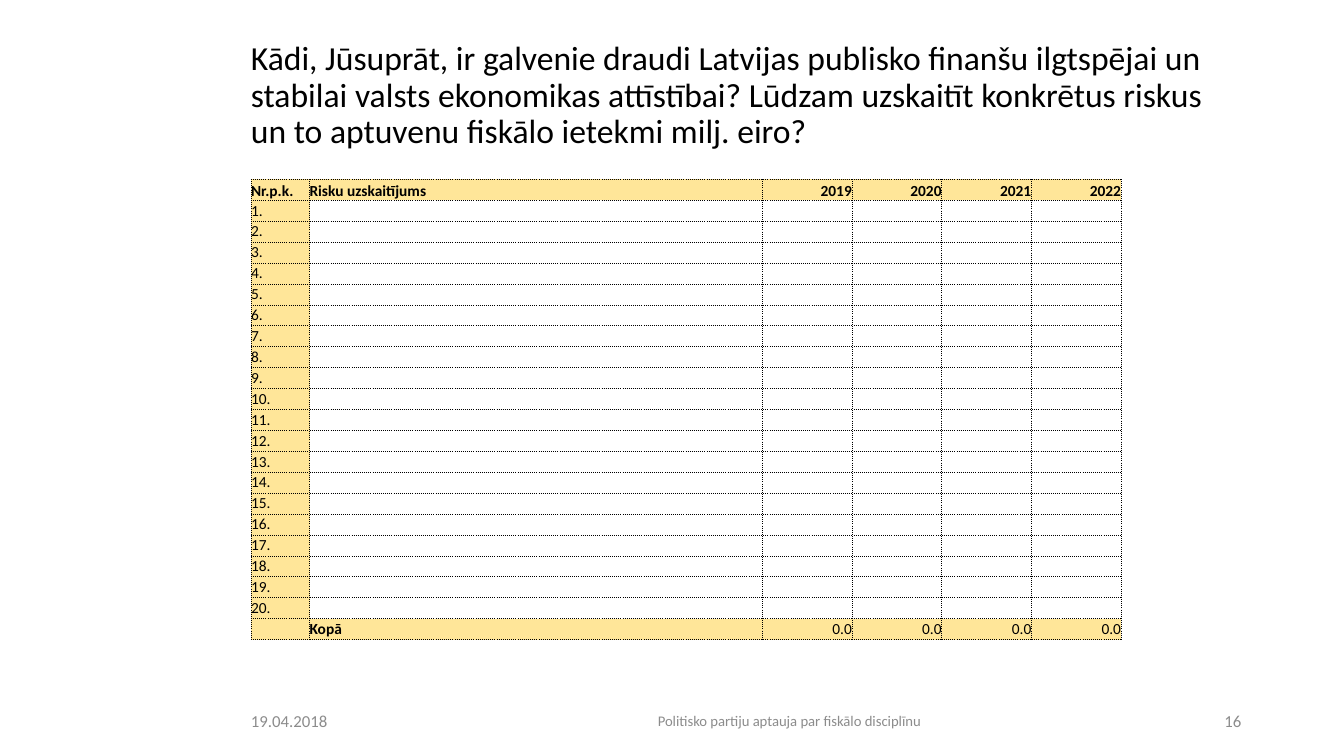
from lxml.etree import SubElement
from pptx import Presentation
from pptx.dml.color import RGBColor
from pptx.enum.text import MSO_ANCHOR, PP_ALIGN
from pptx.oxml.ns import qn
from pptx.util import Pt

PX = 9144
THEME = {
    "font": "Calibri",
    "ink": "000000",
    "grey": "8C8C8C",
    "gold": "FFE699",
    "title": 24,
    "body": 11,
    "foot": 12,
    "note": 10.5,
}
LEFT, MID, RIGHT = PP_ALIGN.LEFT, PP_ALIGN.CENTER, PP_ALIGN.RIGHT


def write(frame, text, size, color=THEME["ink"], bold=False, align=LEFT, space=None):
    para = frame.paragraphs[0]
    para.alignment = align
    para.line_spacing = space
    if not text:
        para._p.get_or_add_endParaRPr().set("sz", str(size * 100))
        return
    run = para.add_run()
    run.text = text
    run.font.name = THEME["font"]
    run.font.size = Pt(size)
    run.font.bold = bold
    run.font.color.rgb = RGBColor.from_string(color)


def edge(cell):
    props = cell._tc.get_or_add_tcPr()
    for side in ("lnL", "lnR", "lnT", "lnB"):
        line = SubElement(props, qn(f"a:{side}"), w=str(Pt(0.5)))
        fill = SubElement(line, qn("a:solidFill"))
        SubElement(fill, qn("a:srgbClr"), val=THEME["ink"])
        SubElement(line, qn("a:prstDash"), val="sysDot")


deck = Presentation()
deck.slide_width, deck.slide_height = 1333 * PX, 750 * PX
slide = deck.slides.add_slide(deck.slide_layouts[6])

title = (
    "Kādi, Jūsuprāt, ir galvenie draudi Latvijas publisko finanšu ilgtspējai un "
    "stabilai valsts ekonomikas attīstībai? Lūdzam uzskaitīt konkrētus riskus "
    "un to aptuvenu fiskālo ietekmi milj. eiro?"
)
foot = {"size": THEME["foot"], "color": THEME["grey"]}
note = {"size": THEME["note"], "color": THEME["grey"], "align": MID}
texts = [
    (239, 40, 1002, 111, title, {"size": THEME["title"], "space": 0.9}),
    (239, 695, 164, 40, "19.04.2018", foot),
    (431, 695, 704, 40, "Politisko partiju aptauja par fiskālo disciplīnu", note),
    (1162, 695, 79, 40, "16", {**foot, "align": RIGHT}),
]
for left, top, width, height, text, style in texts:
    frame = slide.shapes.add_textbox(left * PX, top * PX, width * PX, height * PX).text_frame
    frame.word_wrap = True
    frame.vertical_anchor = MSO_ANCHOR.MIDDLE
    write(frame, text, **style)

rows = [["Nr.p.k.", "Risku uzskaitījums", "2019", "2020", "2021", "2022"]]
rows += [[f"{num}."] + [""] * 5 for num in range(1, 21)]
rows += [["", "Kopā"] + ["0.0"] * 4]
last = len(rows) - 1
widths = [58, 449, 89, 89, 89, 89]

grid = slide.shapes.add_table(
    len(rows), len(widths), 249 * PX, 178 * PX, sum(widths) * PX, 457 * PX
).table
grid.first_row = grid.horz_banding = False
for col, width in zip(grid.columns, widths):
    col.width = width * PX

for row, words in enumerate(rows):
    grid.rows[row].height = 457 * PX // len(rows)
    for col, text in enumerate(words):
        cell = grid.cell(row, col)
        cell.margin_left = cell.margin_right = cell.margin_top = cell.margin_bottom = 0
        cell.vertical_anchor = MSO_ANCHOR.MIDDLE if row else MSO_ANCHOR.BOTTOM
        edge(cell)
        if row in (0, last) or col == 0:
            cell.fill.solid()
            cell.fill.fore_color.rgb = RGBColor.from_string(THEME["gold"])
        else:
            cell.fill.background()
        write(
            cell.text_frame,
            text,
            size=THEME["body"],
            bold=row == 0 or text == "Kopā",
            align=RIGHT if col > 1 else LEFT,
        )

deck.save("out.pptx")
